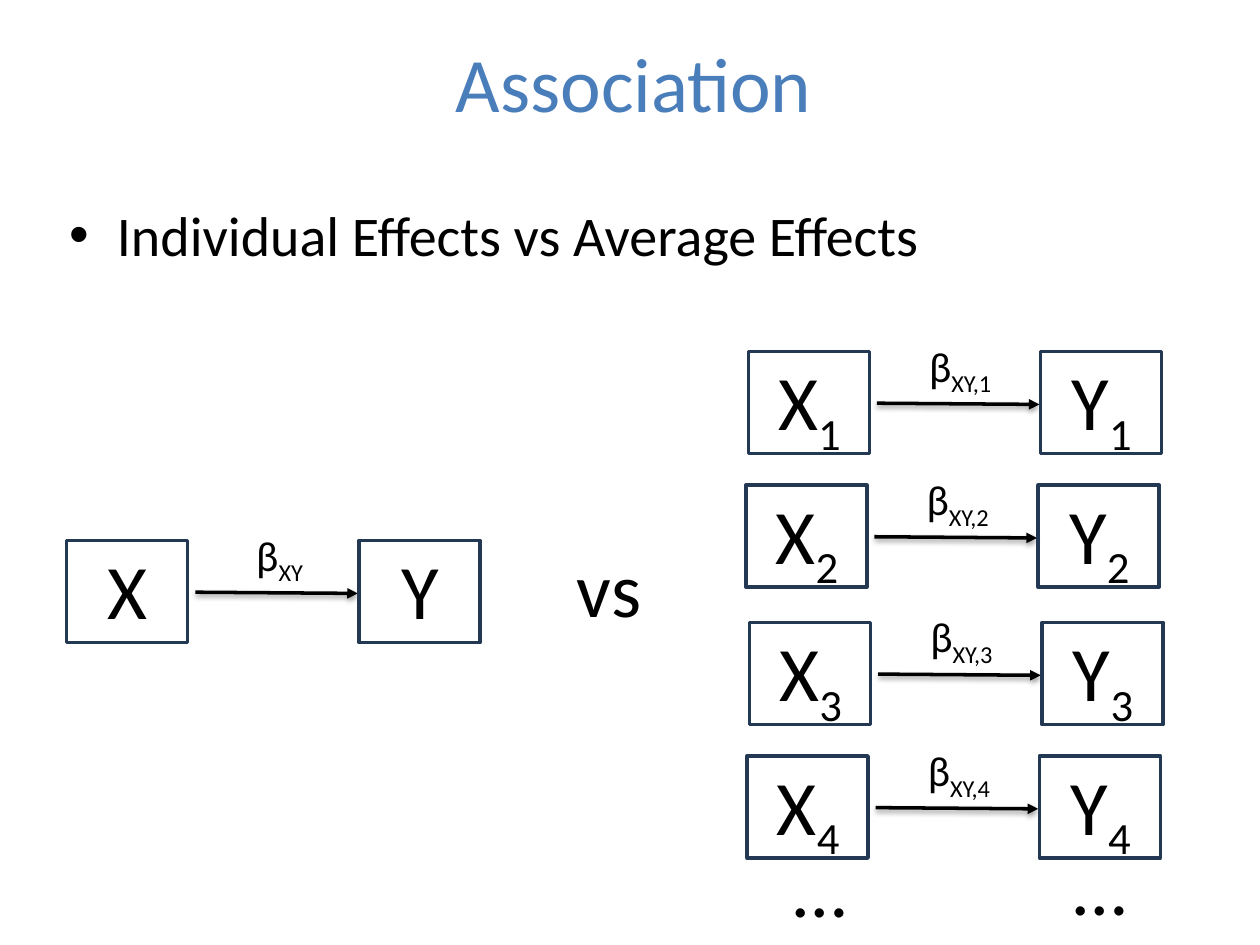
from dataclasses import dataclass

from lxml.etree import SubElement
from pptx import Presentation
from pptx.dml.color import RGBColor
from pptx.enum.shapes import MSO_CONNECTOR, MSO_SHAPE
from pptx.enum.text import MSO_ANCHOR, MSO_AUTO_SIZE, PP_ALIGN
from pptx.oxml.ns import qn
from pptx.util import Inches, Pt

COLORS = {"title": "4A7EBB", "text": "000000", "border": "233953"}
FONT = "Calibri"
SLIDE_WIDTH, SLIDE_HEIGHT = Inches(10), Inches(7.5)
GRID_COLUMNS, GRID_ROWS = 100, 75
BOX_WIDTH, BOX_HEIGHT = 9.6, 8.1
LABEL_WIDTH, LABEL_HEIGHT = 10.7, 8.4
VARIABLE_GAP = 23.2
LINE_WIDTH = Pt(2)


@dataclass(frozen=True)
class Association:
    """An X to Y path whose first box starts at a grid column and row."""
    column: float
    row: float
    index: str = ""
    beta_width: float = 7.5


@dataclass(frozen=True)
class Caption:
    """A free-standing word at a grid column and row."""
    text: str
    column: float
    row: float


ASSOCIATIONS = [
    Association(5.3, 42.9, beta_width=6.1),
    Association(59.4, 27.9, "1"),
    Association(59.2, 38.5, "2"),
    Association(59.5, 49.4, "3"),
    Association(59.3, 60, "4"),
]
CAPTIONS = [Caption("vs", 43, 42.4), Caption("…", 59.7, 66.2), Caption("…", 82, 66.1)]


def across(columns: float) -> int:
    """Convert grid columns to a length."""
    return round(SLIDE_WIDTH * columns / GRID_COLUMNS)


def down(rows: float) -> int:
    """Convert grid rows to a length."""
    return round(SLIDE_HEIGHT * rows / GRID_ROWS)


def area(column: float, row: float, width: float, height: float) -> tuple:
    """Convert a grid rectangle to left, top, width and height."""
    return across(column), down(row), across(width), down(height)


def format_span(span, size: float, color: str = "text") -> None:
    """Give a run its font, size and colour."""
    span.font.name = FONT
    span.font.size = Pt(size)
    span.font.color.rgb = RGBColor.from_string(COLORS[color])


def add_label(shapes, place: tuple, text: str, size: float, subscript: str = "",
              wrap: bool = True, align=PP_ALIGN.CENTER):
    """Add a text box with an optional subscript and return its paragraph."""
    box = shapes.add_textbox(*place)
    box.text_frame.text = text
    box.text_frame.word_wrap = wrap
    box.text_frame.auto_size = MSO_AUTO_SIZE.SHAPE_TO_FIT_TEXT
    para = box.text_frame.paragraphs[0]
    para.alignment = align
    if subscript:
        lowered = para.add_run()
        lowered.text = subscript
        lowered._r.get_or_add_rPr().set("baseline", "-25000")
    for span in para.runs:
        format_span(span, size)
    return para


def add_variable(page, column: float, row: float, name: str, index: str) -> None:
    """Add a grouped box and variable name."""
    group = page.shapes.add_group_shape()
    box = group.shapes.add_shape(MSO_SHAPE.RECTANGLE, *area(column, row, BOX_WIDTH, BOX_HEIGHT))
    box.shadow.inherit = False
    box.fill.background()
    box.line.color.rgb = RGBColor.from_string(COLORS["border"])
    box.line.width = LINE_WIDTH
    place = area(column - 0.5, row - 0.3, LABEL_WIDTH, LABEL_HEIGHT)
    add_label(group.shapes, place, name, 44, index)


def add_arrow(page, column: float, row: float, length: float) -> None:
    """Add an arrow to the right with a soft shadow below it."""
    arrow = page.shapes.add_connector(MSO_CONNECTOR.STRAIGHT, across(column), down(row),
                                      across(column + length), down(row + 0.1))
    arrow.line.color.rgb = RGBColor.from_string(COLORS["text"])
    arrow.line.width = LINE_WIDTH
    SubElement(arrow.line._get_or_add_ln(), qn("a:tailEnd"), type="triangle")
    effects = SubElement(arrow._element.spPr, qn("a:effectLst"))
    shadow = SubElement(effects, qn("a:outerShdw"), blurRad=str(Pt(3.1)), dist=str(Pt(1.6)),
                        dir="5400000", rotWithShape="0")
    shade = SubElement(shadow, qn("a:srgbClr"), val=COLORS["text"])
    SubElement(shade, qn("a:alpha"), val="38000")


def add_association(page, item: Association) -> None:
    """Add both variables, the arrow and its coefficient."""
    add_variable(page, item.column, item.row, "X", item.index)
    add_arrow(page, item.column + 10.2, item.row + 4.1, 12.9)
    add_variable(page, item.column + VARIABLE_GAP, item.row, "Y", item.index)
    subscript = f"XY,{item.index}" if item.index else "XY"
    left = item.column + 17.1 - item.beta_width / 2
    place = area(left, item.row - 1.4, item.beta_width, 5)
    add_label(page.shapes, place, "β", 24, subscript, wrap=False, align=PP_ALIGN.LEFT)


def add_title(page, text: str) -> None:
    """Fill and place the title."""
    title = page.shapes.title
    title.left, title.top, title.width, title.height = area(5.3, 0.2, 90, 12.5)
    title.text_frame.text = text
    title.text_frame.vertical_anchor = MSO_ANCHOR.MIDDLE
    para = title.text_frame.paragraphs[0]
    para.alignment = PP_ALIGN.CENTER
    format_span(para.runs[0], 44, "title")


def add_bullet(page, text: str) -> None:
    """Add the bulleted statement under the title."""
    para = add_label(page.shapes, area(4.5, 15.4, 90, 6.2), text, 32, align=PP_ALIGN.LEFT)
    properties = para._p.get_or_add_pPr()
    properties.set("marL", str(Inches(0.38)))
    properties.set("indent", str(-Inches(0.38)))
    SubElement(properties, qn("a:buFont"), typeface="Arial")
    SubElement(properties, qn("a:buChar"), char="•")


def main() -> None:
    """Build and save the slide."""
    deck = Presentation()
    deck.slide_width, deck.slide_height = SLIDE_WIDTH, SLIDE_HEIGHT
    page = deck.slides.add_slide(deck.slide_layouts.get_by_name("Title Only"))
    add_title(page, "Association")
    add_bullet(page, "Individual Effects vs Average Effects")
    for item in ASSOCIATIONS:
        add_association(page, item)
    for caption in CAPTIONS:
        place = area(caption.column, caption.row, LABEL_WIDTH, LABEL_HEIGHT)
        add_label(page.shapes, place, caption.text, 44)
    deck.save("out.pptx")


if __name__ == "__main__":
    main()
